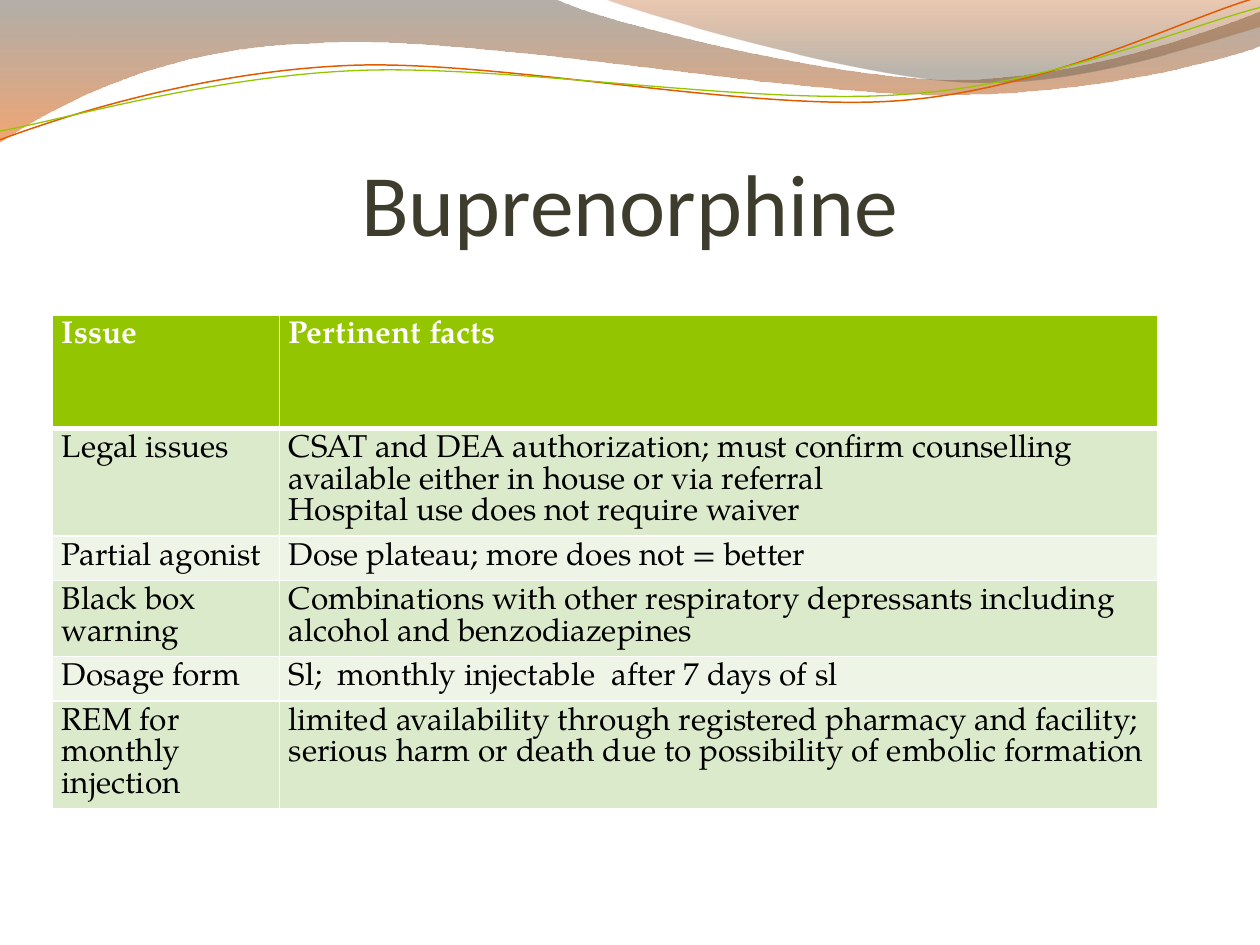
import pptx
import pptx.dml.color
import pptx.enum.text
import pptx.oxml
import pptx.oxml.ns
import pptx.util
from dataclasses import dataclass

Inches, Pt = pptx.util.Inches, pptx.util.Pt
RGB = pptx.dml.color.RGBColor.from_string
qn = pptx.oxml.ns.qn
A_NS = pptx.oxml.ns.nsdecls("a")


@dataclass(frozen=True)
class Theme:
    title_font: str = "Calibri"
    body_font: str = "TeX Gyre Pagella"
    title_size: int = 50
    body_size: int = 18
    title: str = "3E3D2D"
    green: str = "94C600"
    orange: str = "E15B00"
    white: str = "FFFFFF"
    black: str = "000000"
    bands: tuple = ("DCEACC", "EEF5E7")
    # Gradient stops: position, colour, opacity in percent
    wave_back: tuple = ((0, "554D41", 45), (100, "E75D00", 55))
    wave_front: tuple = ((0, "BD4C00", 30), (80, "685D4B", 45))


THEME = Theme()

# Outlines: start point, then segments of one point (line) or three (Bezier)
WAVE_BACK = [
    (0, 0), [(4.4, -0.01)],
    [(4.76, 0.17), (6.64, 0.63), (7.58, 0.63)],
    [(8.53, 0.63), (9.58, 0.26), (10, 0.09)],
    [(10.01, 0.36)],
    [(9.83, 0.44), (8.7, 0.76), (7.46, 0.75)],
    [(6.22, 0.75), (3.82, 0.28), (2.57, 0.34)],
    [(1.29, 0.36), (0.46, 0.83), (-0.01, 1.13)],
    [(0, 0)],
]
WAVE_FRONT = [
    (4.79, -0.01),
    [(5.09, 0.11), (6.82, 0.62), (7.69, 0.65)],
    [(8.56, 0.69), (9.61, 0.32), (10, 0.21)],
    [(10, 0)],
    [(4.79, -0.01)],
]
STRAND_ORANGE = [
    (0, 1.11),
    [(0.48, 0.93), (1.58, 0.57), (2.77, 0.52)],
    [(3.95, 0.47), (5.93, 0.89), (7.13, 0.8)],
    [(8.33, 0.71), (9.38, 0.15), (9.98, -0.02)],
]
STRAND_GREEN = [
    (0, 1.04),
    [(0.47, 0.96), (1.64, 0.61), (2.83, 0.56)],
    [(4.03, 0.51), (5.97, 0.84), (7.17, 0.75)],
    [(8.36, 0.67), (9.41, 0.21), (10, 0.06)],
]

ROWS = [
    ("Issue", "Pertinent facts"),
    ("Legal issues",
     "CSAT and DEA authorization; must confirm counselling available either "
     "in house or via referral\nHospital use does not require waiver"),
    ("Partial agonist", "Dose plateau; more does not = better"),
    ("Black box warning",
     "Combinations with other respiratory depressants including alcohol and "
     "benzodiazepines"),
    ("Dosage form", "Sl;  monthly injectable  after 7 days of sl"),
    ("REM for monthly injection",
     "limited availability through registered pharmacy and facility; serious "
     "harm or death due to possibility of embolic formation"),
]
COL_SHARES = (1.8, 6.97)
ROW_HEIGHTS = (0.9, 0.85, 0.35, 0.6, 0.35, 0.85)


def set_attrs(obj, values):
    for name, value in values.items():
        setattr(obj, name, value)


def format_font(font, name, size, color, bold=False):
    set_attrs(font, {"name": name, "size": Pt(size), "bold": bold})
    font.color.rgb = RGB(color)


def add_outline(slide, box, outline, close):
    left, top = box[:2]
    start, segments = outline[0], outline[1:]
    points = [(left + Inches(x), top + Inches(y))
              for x, y in [start, *(p for segment in segments for p in segment)]]
    builder = slide.shapes.build_freeform(*points[0])
    builder.add_line_segments(points[1:], close=close)
    sp = builder.convert_to_shape()
    sp.shadow.inherit = False
    # Join each run of three line points into one Bezier segment
    lines = iter(list(sp._element.spPr.iter(qn("a:lnTo"))))
    for segment in segments:
        group = [next(lines) for _ in segment]
        if len(group) == 3:
            curve = pptx.oxml.parse_xml(f"<a:cubicBezTo {A_NS}/>")
            group[0].addprevious(curve)
            for line in group:
                curve.append(line[0])
                line.getparent().remove(line)
    return sp


def add_waves(slide, box):
    # Translucent gradient bands
    for outline, stops in ((WAVE_BACK, THEME.wave_back),
                           (WAVE_FRONT, THEME.wave_front)):
        sp = add_outline(slide, box, outline, close=True)
        sp.line.fill.background()
        sp.fill.gradient()
        sp.fill.gradient_angle = 270
        for stop, (position, color, _) in zip(sp.fill.gradient_stops, stops):
            stop.position = position / 100
            stop.color.rgb = RGB(color)
        colors = list(sp._element.spPr.iter(qn("a:srgbClr")))
        for element, (_, _, opacity) in zip(colors, stops):
            element.append(pptx.oxml.parse_xml(
                f'<a:alpha {A_NS} val="{opacity * 1000}"/>'))
    # Thin strands
    for outline, color, width in ((STRAND_ORANGE, THEME.orange, 0.85),
                                  (STRAND_GREEN, THEME.green, 0.75)):
        sp = add_outline(slide, box, outline, close=False)
        sp.fill.background()
        sp.line.color.rgb = RGB(color)
        sp.line.width = Pt(width)


def add_title(slide, box, text):
    title = slide.shapes.title
    set_attrs(title, dict(zip(("left", "top", "width", "height"), box)))
    tf = title.text_frame
    set_attrs(tf, {"margin_left": 0, "margin_right": 0, "margin_bottom": 0,
                   "margin_top": Inches(0.05), "word_wrap": True,
                   "vertical_anchor": pptx.enum.text.MSO_ANCHOR.BOTTOM})
    tf.text = text
    p = tf.paragraphs[0]
    p.alignment = pptx.enum.text.PP_ALIGN.CENTER
    format_font(p.runs[0].font, THEME.title_font, THEME.title_size, THEME.title)
    # Keep the title in front of the waves
    slide.shapes._spTree.append(title._element)


def set_borders(cell, **widths):
    tcPr = cell._tc.get_or_add_tcPr()
    for i, side in enumerate("LRTB"):
        width = Pt(widths.get(side, 1))
        tcPr.insert(i, pptx.oxml.parse_xml(
            f'<a:ln{side} {A_NS} w="{width}"><a:solidFill>'
            f'<a:srgbClr val="{THEME.white}"/></a:solidFill></a:ln{side}>'))


def add_facts_table(slide, box):
    left, top, width, height = box
    table = slide.shapes.add_table(len(ROWS), len(COL_SHARES),
                                   left, top, width, height).table
    for column, share in zip(table.columns, COL_SHARES):
        column.width = int(width * share / sum(COL_SHARES))
    for i, (row, row_height) in enumerate(zip(table.rows, ROW_HEIGHTS)):
        row.height = int(height * row_height / sum(ROW_HEIGHTS))
        header = i == 0
        for cell, text in zip(row.cells, ROWS[i]):
            set_attrs(cell, {"margin_left": Inches(3 / 40), "margin_right": Inches(3 / 40),
                             "margin_top": Inches(0.05), "margin_bottom": Inches(0.05)})
            cell.fill.solid()
            cell.fill.fore_color.rgb = RGB(THEME.green if header else THEME.bands[(i - 1) % 2])
            set_borders(cell, B=3 if header else 1, T=3 if i == 1 else 1)
            cell.text = text
            for p in cell.text_frame.paragraphs:
                format_font(p.runs[0].font, THEME.body_font, THEME.body_size,
                            THEME.white if header else THEME.black, header)


def main():
    prs = pptx.Presentation()
    prs.slide_width, prs.slide_height = Inches(10), Inches(7.5)
    slide = prs.slides.add_slide(prs.slide_layouts[5])
    add_waves(slide, (0, 0, prs.slide_width, Inches(1.13)))
    add_title(slide, (Inches(0.5), Inches(0.77), Inches(9), Inches(1.25)),
              "Buprenorphine")
    add_facts_table(slide, (Inches(5 / 12), Inches(2.5), Inches(8.77), Inches(3.9)))
    prs.save("out.pptx")


if __name__ == "__main__":
    main()
